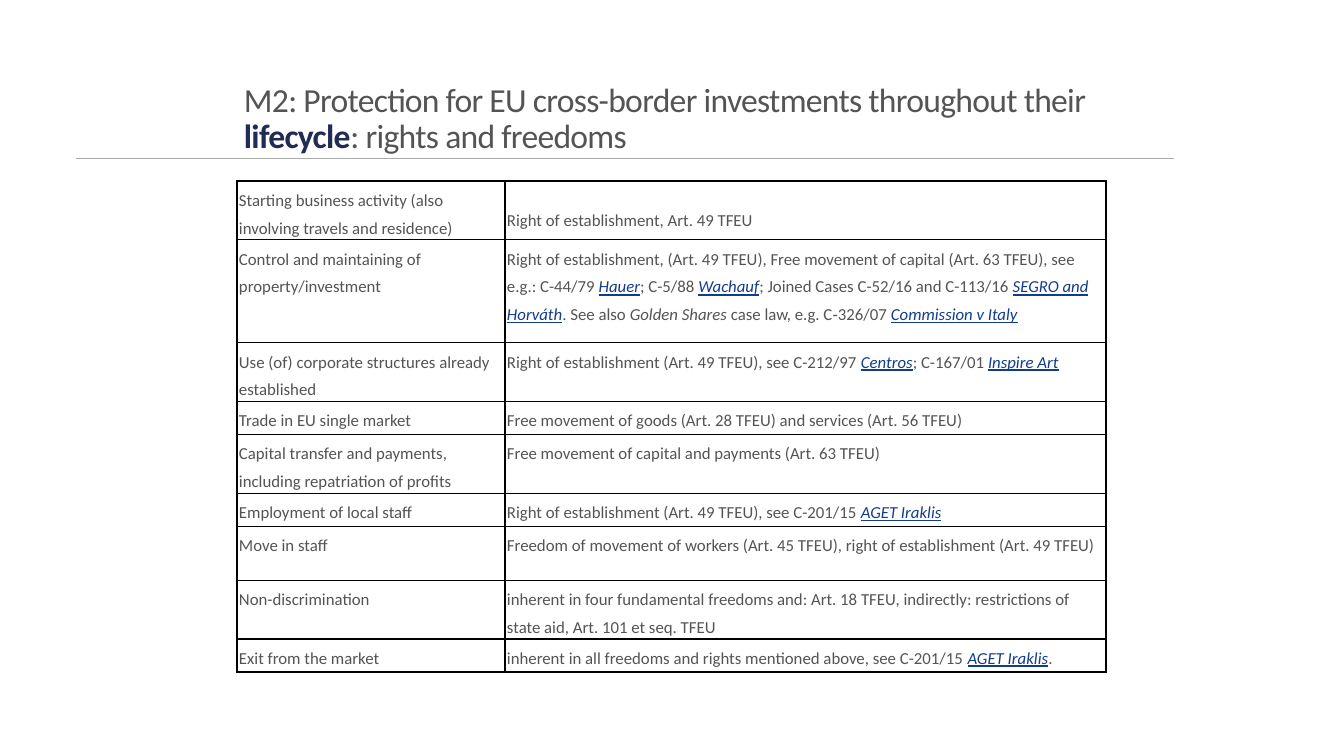
import pptx
import pptx.util
import pptx.dml.color
import pptx.enum.shapes
import pptx.enum.text
import pptx.oxml
import pptx.oxml.ns

PX = 914400 / 100.8
HEX = {"text": "545454", "navy": "212B55", "link": "123D8C", "rule": "AAAAAA", "edge": "000000"}
FORM = {
    "head": {"size": 24, "bold": False, "color": "text"},
    "strong": {"size": 24, "bold": True, "color": "navy"},
    "plain": {"size": 12, "color": "text"},
    "ital": {"size": 12, "italic": True, "color": "text"},
    "link": {"size": 12, "italic": True, "underline": True, "color": "link"},
}


def emu(px):
    return pptx.util.Emu(round(px * PX))


def write(para, runs, space):
    para.line_spacing = space
    for kind, text in runs:
        run = para.add_run()
        run.text = text
        run.font.name = "Calibri"
        for key, val in FORM[kind].items():
            if key == "color":
                run.font.color.rgb = pptx.dml.color.RGBColor.from_string(HEX[val])
            elif key == "size":
                run.font.size = pptx.util.Pt(val)
            else:
                setattr(run.font, key, val)


deck = pptx.Presentation()
deck.slide_width, deck.slide_height = emu(1344), emu(756)
slide = deck.slides.add_slide(deck.slide_layouts[6])

# Rule under the title
rule = slide.shapes.add_connector(
    pptx.enum.shapes.MSO_CONNECTOR.STRAIGHT, emu(76), emu(158), emu(1174), emu(158))
rule.line.color.rgb = pptx.dml.color.RGBColor.from_string(HEX["rule"])
rule.line.width = pptx.util.Pt(0.5)
pptx.oxml.ns.qn("a:effectLst")
rule._element.spPr.append(pptx.oxml.parse_xml(
    f'<a:effectLst {pptx.oxml.ns.nsdecls("a")}/>'))

# Title
box = slide.shapes.add_textbox(emu(237), emu(57), emu(869), emu(125))
frame = box.text_frame
form = {"word_wrap": True, "vertical_anchor": pptx.enum.text.MSO_ANCHOR.MIDDLE,
        "margin_left": emu(7), "margin_right": emu(7),
        "margin_top": emu(4), "margin_bottom": emu(4)}
for key, val in form.items():
    setattr(frame, key, val)
write(frame.paragraphs[0], [
    ("head", "M2: Protection for EU cross-border investments throughout their "),
    ("strong", "lifecycle"),
    ("head", ": rights and freedoms")], 0.9)
for run in frame.paragraphs[0].runs:
    run.font._element.set("spc", "-50")

# Table rows: height, stage, rights
ROWS = [
    (58, "Starting business activity (also involving travels and residence)",
     [("plain", "Right of establishment, Art. 49 TFEU")]),
    (103, "Control and maintaining of property/investment",
     [("plain", "Right of establishment, (Art. 49 TFEU), Free movement of capital "
                "(Art. 63 TFEU), see e.g.: C-44/79 "),
      ("link", "Hauer"), ("plain", "; C-5/88 "), ("link", "Wachauf"),
      ("plain", "; Joined Cases C-52/16 and C-113/16 "), ("link", "SEGRO and Horváth"),
      ("plain", ". See also "), ("ital", "Golden Shares "),
      ("plain", "case law, e.g. C‑326/07 "), ("link", "Commission v Italy")]),
    (58, "Use (of) corporate structures already established",
     [("plain", "Right of establishment (Art. 49 TFEU), see C-212/97 "), ("link", "Centros"),
      ("plain", "; C-167/01 "), ("link", "Inspire Art")]),
    (33, "Trade in EU single market",
     [("plain", "Free movement of goods (Art. 28 TFEU) and services (Art. 56 TFEU)")]),
    (58, "Capital transfer and payments, including repatriation of profits",
     [("plain", "Free movement of capital and payments (Art. 63 TFEU)")]),
    (33, "Employment of local staff",
     [("plain", "Right of establishment (Art. 49 TFEU), see C-201/15 "),
      ("link", "AGET Iraklis")]),
    (54, "Move in staff",
     [("plain", "Freedom of movement of workers (Art. 45 TFEU), "
                "right of establishment (Art. 49 TFEU)")]),
    (58, "Non-discrimination",
     [("plain", "inherent in four fundamental freedoms and: Art. 18 TFEU, indirectly: "
                "restrictions of state aid, Art. 101 et seq. TFEU")]),
    (33, "Exit from the market",
     [("plain", "inherent in all freedoms and rights mentioned above, see C-201/15 "),
      ("link", "AGET Iraklis"), ("plain", ".")]),
]

# Table
high = sum(row[0] for row in ROWS)
grid = slide.shapes.add_table(len(ROWS), 2, emu(237), emu(181), emu(869), emu(high)).table
grid.first_row = grid.horz_banding = False
for col, wide in zip(grid.columns, (268, 601)):
    col.width = emu(wide)
for row, (tall, stage, rights) in zip(grid.rows, ROWS):
    row.height = emu(tall)
    for cell, runs in zip(row.cells, ([("plain", stage)], rights)):
        for side in ("left", "right", "top", "bottom"):
            setattr(cell, "margin_" + side, emu(2))
        cell.fill.background()
        write(cell.text_frame.paragraphs[0], runs, 1.36)
        # Cell borders
        for spot, side in enumerate("LRTB"):
            cell._tc.tcPr.insert(spot, pptx.oxml.parse_xml(
                f'<a:ln{side} {pptx.oxml.ns.nsdecls("a")} w="12700"><a:solidFill>'
                f'<a:srgbClr val="{HEX["edge"]}"/></a:solidFill></a:ln{side}>'))

# The first right sits lower in its cell
grid.cell(0, 1).margin_top = emu(22)

deck.save("out.pptx")
